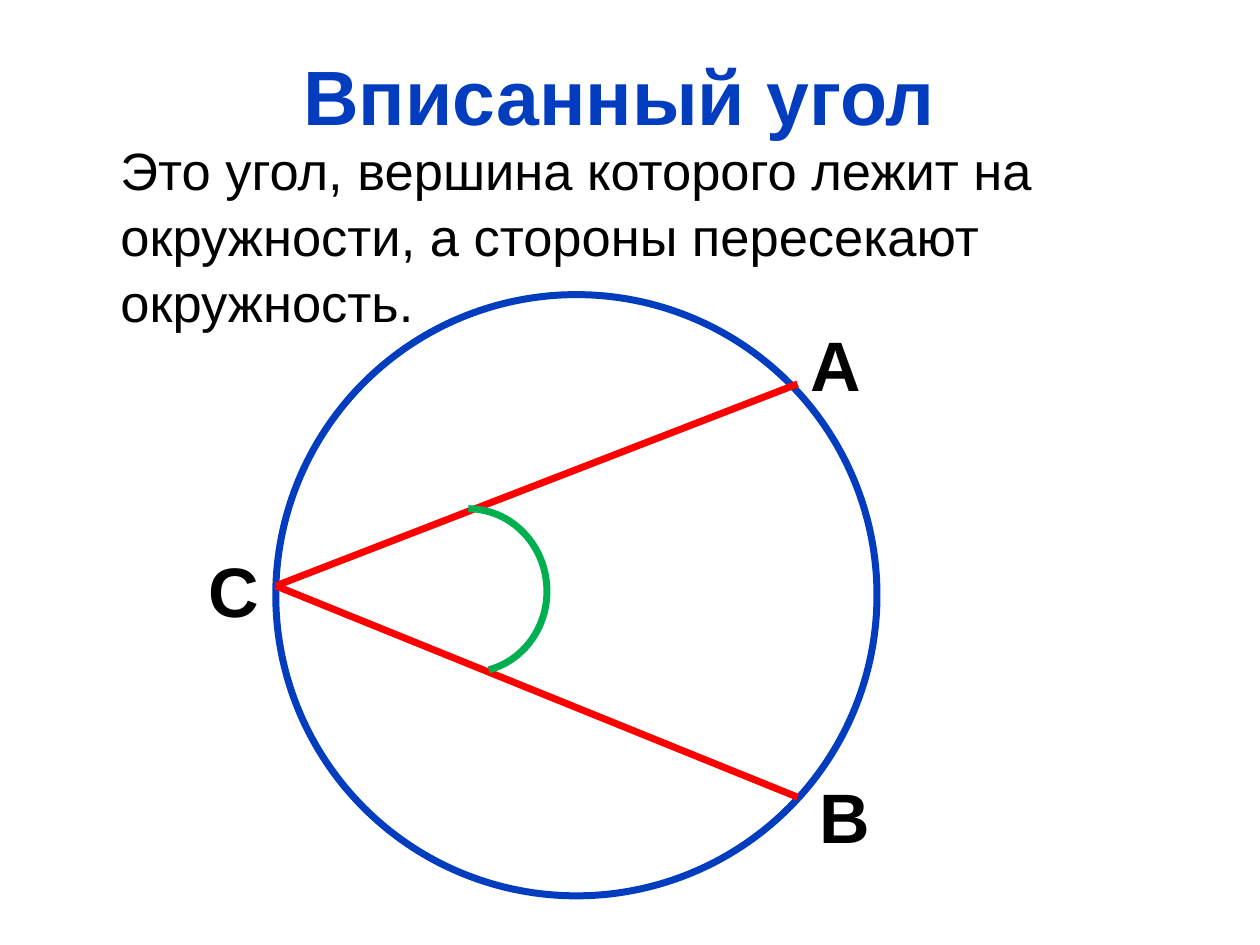
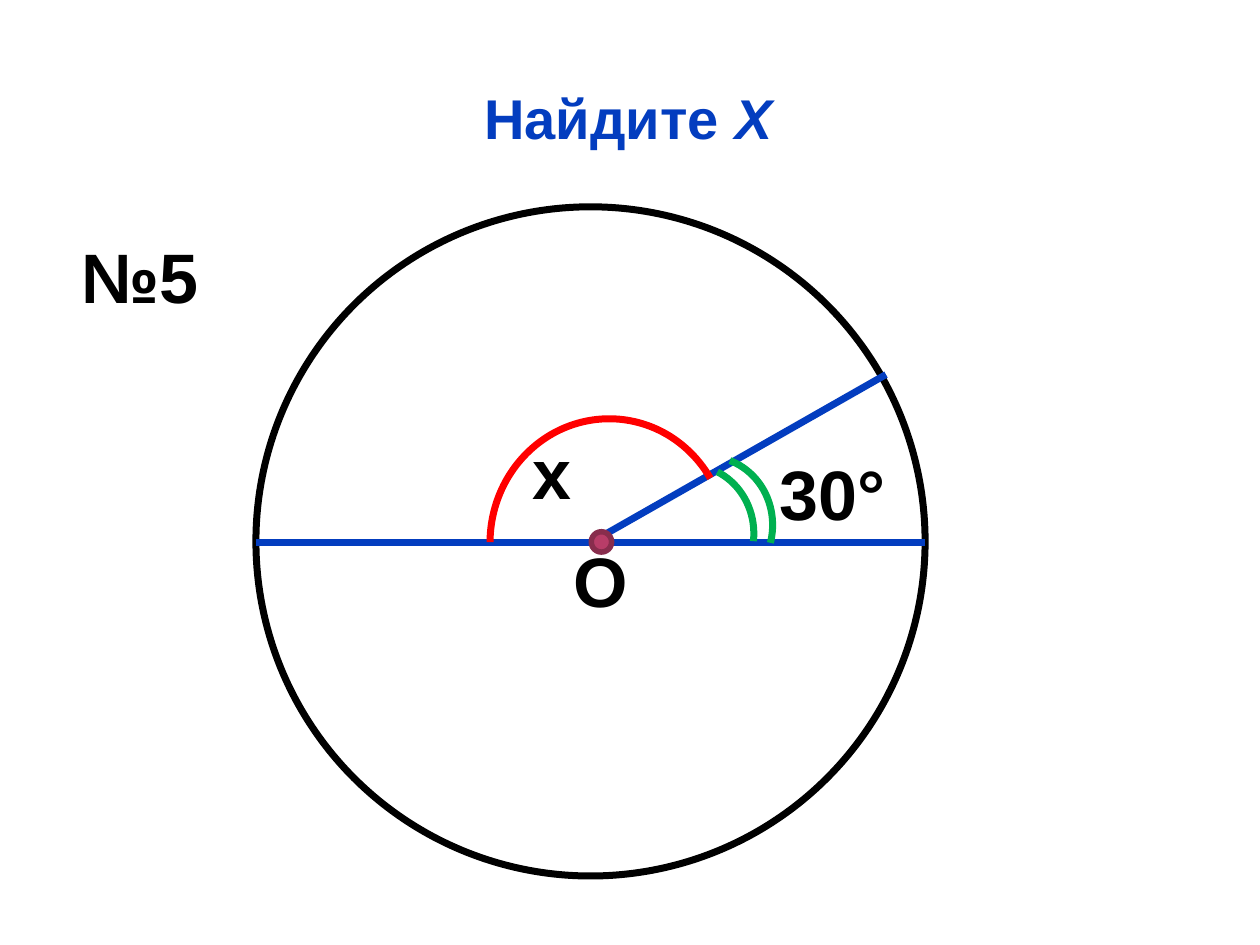
import pptx
import pptx.dml.color
import pptx.enum.shapes
import pptx.enum.text
import pptx.oxml
import pptx.util
from pptx.util import Cm

FONT = "Arial"
LINE_WIDTH = 4
LABEL_SIZE = 40
LABEL_HEIGHT = 1.96
COLORS = {
    "blue": "033DBF",
    "black": "000000",
    "white": "FFFFFF",
    "red": "FF0000",
    "green": "00B050",
    "dot": "B83D68",
    "dot_edge": "882D4D",
}
SHAPE = pptx.enum.shapes.MSO_SHAPE


def color(name):
    return pptx.dml.color.RGBColor.from_string(COLORS[name])


def add_run(paragraph, text, size, color_name="black", bold=True, italic=False):
    run = paragraph.add_run()
    run.text = text
    font = run.font
    font.name, font.size = FONT, pptx.util.Pt(size)
    font.bold, font.italic = bold, italic
    font.color.rgb = color(color_name)


def set_line(shape, color_name, width=LINE_WIDTH):
    shape.line.color.rgb = color(color_name)
    shape.line.width = pptx.util.Pt(width)


def add_title_slide(presentation, box, runs, size):
    """Add a slide with a blue title; runs are (text, italic) pairs."""
    slide = presentation.slides.add_slide(presentation.slide_layouts[5])
    title = slide.shapes.title
    title.left, title.top, title.width, title.height = map(Cm, box)
    frame = title.text_frame
    frame.auto_size = pptx.enum.text.MSO_AUTO_SIZE.NONE
    frame.vertical_anchor = pptx.enum.text.MSO_ANCHOR.BOTTOM
    paragraph = frame.paragraphs[0]
    paragraph.alignment = pptx.enum.text.PP_ALIGN.CENTER
    for text, italic in runs:
        add_run(paragraph, text, size, "blue", italic=italic)
    return slide


def add_text(slide, box, text, size=LABEL_SIZE, bold=True, wrap=True):
    frame = slide.shapes.add_textbox(*map(Cm, box)).text_frame
    frame.word_wrap = wrap
    add_run(frame.paragraphs[0], text, size, bold=bold)
    return frame


def add_circle(slide, left, top, size, line, fill=None, width=LINE_WIDTH):
    circle = slide.shapes.add_shape(
        SHAPE.OVAL, Cm(left), Cm(top), Cm(size), Cm(size))
    circle.shadow.inherit = False
    if fill:
        circle.fill.solid()
        circle.fill.fore_color.rgb = color(fill)
    else:
        circle.fill.background()
    set_line(circle, line, width)


def add_arc(slide, box, rotation, start, end, color_name):
    """Add an angle mark; start and end are degrees before rotation."""
    arc = slide.shapes.add_shape(SHAPE.ARC, *map(Cm, box))
    arc.shadow.inherit = False
    arc.fill.background()
    arc.rotation = rotation
    # Angles are stored in 1/60000 degree, adjustments in 1/100000
    arc.adjustments[0], arc.adjustments[1] = start * 0.6, end * 0.6
    set_line(arc, color_name)


def add_segment(shapes, start, end, color_name):
    segment = shapes.add_connector(
        pptx.enum.shapes.MSO_CONNECTOR.STRAIGHT, *map(Cm, (*start, *end)))
    set_line(segment, color_name)
    segment._element.spPr.append(pptx.oxml.parse_xml(
        '<a:effectLst xmlns:a="http://schemas.openxmlformats.org/drawingml/2006/main"/>'))


def draw_inscribed_angle(slide, left, top, size):
    add_circle(slide, left, top, size, "blue")

    # Sides of the angle, from its vertex on the circle
    point_a = (left + 10.52, top + 1.8)
    point_b = (left + 10.52, top + 10.13)
    vertex = (left, top + 5.87)
    sides = slide.shapes.add_group_shape().shapes
    add_segment(sides, point_a, vertex, "red")
    add_segment(sides, vertex, point_b, "red")
    add_arc(slide, (left + 2.24, top + 4.39, 3.3, 3.15), 84.9, 184.75, 350.88, "green")

    # Point names
    for text, x, y, width in (("С", -1.6, 4.98, 1.57),
                              ("А", 10.52, 0.41, 1.57),
                              ("В", 10.72, 9.52, 2.59)):
        add_text(slide, (left + x, top + y, width, LABEL_HEIGHT), text)


def draw_central_angle(slide, left, top, size):
    add_circle(slide, left, top, size, "black", "white")
    middle = top + 6.76

    # Diameter and radius
    add_segment(slide.shapes, (left + size, middle), (left, middle), "blue")
    add_segment(slide.shapes, (left + 12.7, top + 3.38), (left + 6.76, middle), "blue")

    # Unknown angle, then the double mark of the known one
    add_arc(slide, (left + 4.62, top + 4.37, 4.98, 4.78), 273.1, 266.93, 54.73, "red")
    for x, y, start, end in ((7.72, 5.11, 196.52, 283.15),
                             (7.34, 5.28, 202.3, 274.07)):
        add_arc(slide, (left + x, top + y, 2.77, 2.62), 92.5, start, end, "green")

    # Centre, angle values and task number
    for text, x, y, width, wrap in (("О", 6.15, 6.55, 1.4, True),
                                    ("x", 5.33, 4.37, 1.4, True),
                                    ("30°", 10.31, 4.78, 2.67, False),
                                    ("№5", -3.76, 0.41, 3.38, True)):
        add_text(slide, (left + x, top + y, width, LABEL_HEIGHT), text, wrap=wrap)
    add_circle(slide, left + 6.76, top + 6.55, 0.41, "dot_edge", "dot", 3.15)


def main():
    presentation = pptx.Presentation()
    presentation.slide_width, presentation.slide_height = Cm(25.4), Cm(19.05)

    # Definition of the inscribed angle
    slide = add_title_slide(presentation, (2.11, 0.71, 20.75, 2.26),
                            [("Вписанный угол", False)], 44)
    definition = add_text(
        slide, (2.18, 2.59, 23.22, 4.11),
        "Это угол, вершина которого лежит на окружности, "
        "а стороны пересекают окружность.", size=30, bold=False)
    definition.paragraphs[0].line_spacing = 1.05
    draw_inscribed_angle(slide, 5.56, 5.94, 12.12)

    # Exercise on the central angle
    slide = add_title_slide(presentation, (2.29, 1.52, 20.75, 1.65),
                            [("Найдите ", False), ("Х", True)], 32)
    draw_central_angle(slide, 5.16, 4.17, 13.49)

    presentation.save("out.pptx")


if __name__ == "__main__":
    main()
